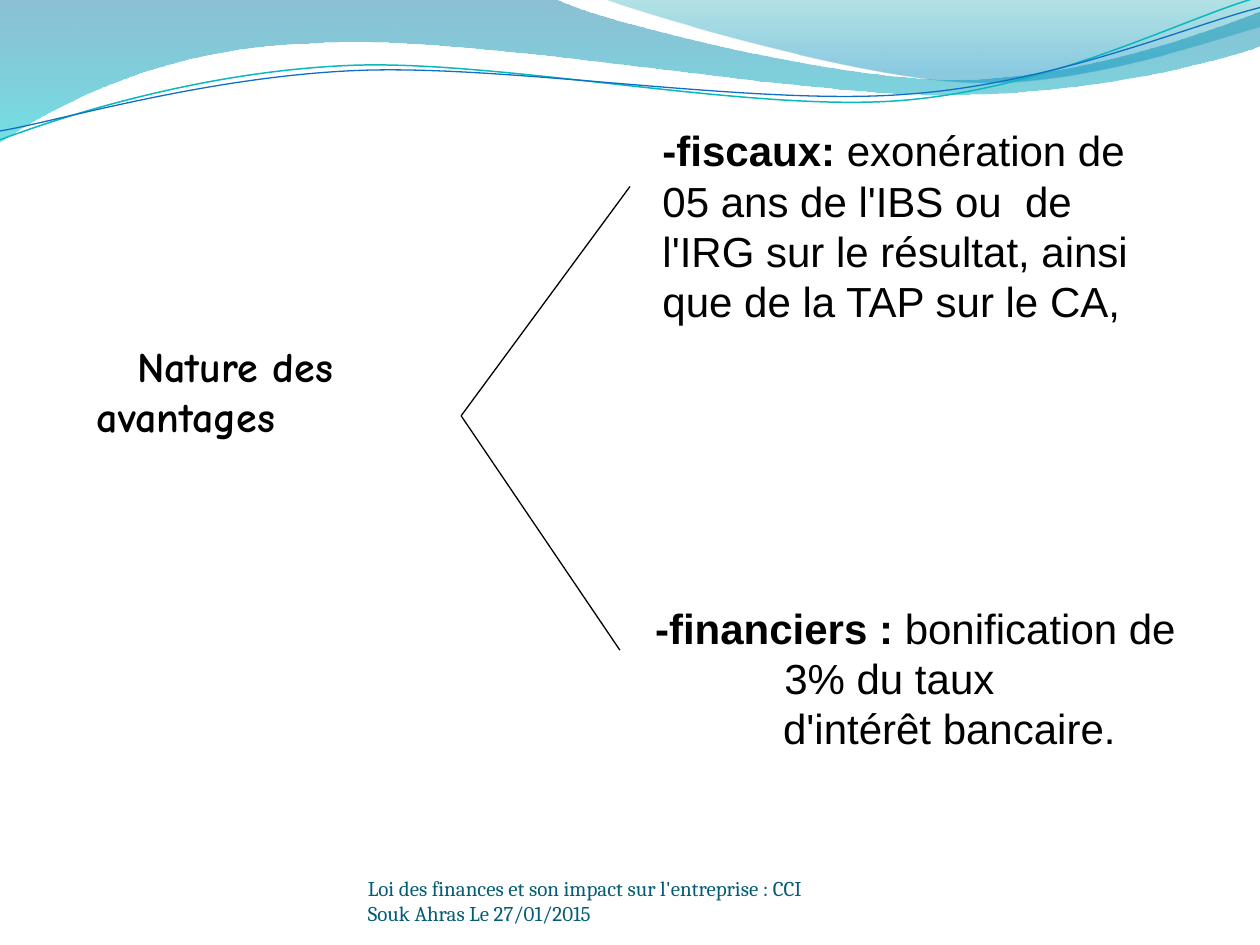
import dataclasses
from typing import Optional

import lxml.etree
import pptx
import pptx.dml.color
import pptx.enum.shapes
import pptx.enum.text
import pptx.oxml.ns
import pptx.util

RGBColor = pptx.dml.color.RGBColor
Anchor = pptx.enum.text.MSO_ANCHOR
Align = pptx.enum.text.PP_ALIGN
qn = pptx.oxml.ns.qn

BLACK = RGBColor(0x00, 0x00, 0x00)
FOOTER_TEAL = RGBColor(0x04, 0x5D, 0x75)
DEEP_BLUE = RGBColor(0x00, 0x74, 0xA1)
AQUA = RGBColor(0x00, 0xC6, 0xCF)
SEA_GREEN = RGBColor(0x00, 0xA1, 0xA9)
SKY_BLUE = RGBColor(0x00, 0x8B, 0xBF)
LINE_TEAL = RGBColor(0x0A, 0xB8, 0xBF)
LINE_BLUE = RGBColor(0x0F, 0x6F, 0xC6)

# The slide is a grid of 10 columns by 7.5 square rows
WIDTH = pptx.util.Inches(10)
HEIGHT = pptx.util.Inches(7.5)
COLUMNS, ROWS = 10, 7.5


def column(count: float) -> int:
    return round(WIDTH * count / COLUMNS)


def row(count: float) -> int:
    return round(HEIGHT * count / ROWS)


@dataclasses.dataclass
class Stop:
    position: float
    color: RGBColor
    opacity: int  # percent


@dataclasses.dataclass
class Wave:
    frame: tuple  # left, top, right, bottom
    start: tuple
    segments: list  # two numbers are a straight side, six a cubic curve
    stops: tuple = ()
    line: Optional[RGBColor] = None
    weight: float = 0


@dataclasses.dataclass
class Span:
    text: str
    bold: bool = False


@dataclasses.dataclass
class Para:
    spans: list
    align: Align = Align.LEFT
    margin: float = 0
    indent: float = 0


@dataclasses.dataclass
class TextBlock:
    place: tuple  # left, top, width, height
    paras: list
    font: str = "Arial"
    size: float = 24
    color: RGBColor = BLACK
    anchor: Anchor = Anchor.TOP
    inset: Optional[float] = None


WAVES = [
    Wave((-0.01, -0.01, 10.01, 1.13), (0, 0),
         [(4.4, -0.01),
          (4.76, 0.17, 6.64, 0.63, 7.58, 0.63),
          (8.53, 0.63, 9.58, 0.26, 10, 0.09),
          (10.01, 0.36),
          (9.83, 0.44, 8.7, 0.76, 7.46, 0.75),
          (6.22, 0.75, 3.82, 0.28, 2.57, 0.34),
          (1.29, 0.36, 0.46, 0.83, -0.01, 1.13),
          (0, 0)],
         stops=(Stop(0, DEEP_BLUE, 45), Stop(1, AQUA, 55))),
    Wave((4.79, -0.01, 10, 0.69), (4.79, -0.01),
         [(5.09, 0.11, 6.82, 0.62, 7.69, 0.65),
          (8.56, 0.69, 9.61, 0.32, 10, 0.21),
          (10, 0),
          (4.79, -0.01)],
         stops=(Stop(0, SEA_GREEN, 30), Stop(0.8, SKY_BLUE, 45))),
    Wave((0, -0.02, 9.98, 1.11), (0, 1.11),
         [(0.48, 0.93, 1.58, 0.57, 2.77, 0.52),
          (3.95, 0.47, 5.93, 0.89, 7.13, 0.8),
          (8.33, 0.71, 9.38, 0.15, 9.98, -0.02)],
         line=LINE_TEAL, weight=0.85),
    Wave((0, 0.06, 10, 1.04), (0, 1.04),
         [(0.47, 0.96, 1.64, 0.61, 2.83, 0.56),
          (4.03, 0.51, 5.97, 0.84, 7.17, 0.75),
          (8.36, 0.67, 9.41, 0.21, 10, 0.06)],
         line=LINE_BLUE, weight=0.75),
]

FISCAL = TextBlock((5.16, 0.94, 4.14, 1.72), [
    Para([Span("-fiscaux:", True),
          Span(" exonération de 05 ans de l'IBS ou  de l'IRG sur le résultat, "
               "ainsi que de la TAP sur le CA,")])])
FINANCIAL = TextBlock((4.76, 4.73, 4.69, 1.31), [
    Para([Span("-financiers :", True), Span(" bonification de 3% du taux ")],
         Align.CENTER, indent=0.32),
    Para([Span("d'intérêt bancaire.")], Align.CENTER, margin=0.86)])
NATURE = TextBlock((0.67, 2.65, 2.99, 1.3), [
    Para([Span("Nature des avantages", True)], indent=0.32)],
    font="Comic Neue")
FOOTER = TextBlock((2.92, 6.95, 3.67, 0.4), [
    Para([Span("Loi des finances et son impact sur l'entreprise : "
               "CCI Souk Ahras Le 27/01/2015")])],
    font="Cambria", size=12, color=FOOTER_TEAL, anchor=Anchor.BOTTOM, inset=0)

BRANCH_START = (3.66, 3.3)
BRANCH_ENDS = [(5, 1.48), (4.92, 5.16)]


def add_step(outline, kind: str, numbers: tuple, left: float, top: float) -> None:
    """Add one drawing step, with its points measured from the frame's corner."""
    step = lxml.etree.SubElement(outline, qn(kind))
    for x, y in zip(numbers[::2], numbers[1::2]):
        point = lxml.etree.SubElement(step, qn("a:pt"))
        point.set("x", str(column(x - left)))
        point.set("y", str(row(y - top)))


def draw_wave(page, wave: Wave) -> None:
    left, top, right, bottom = wave.frame
    builder = page.shapes.build_freeform(column(left), row(top))
    builder.add_line_segments([(column(right), row(bottom))], close=False)
    shape = builder.convert_to_shape()
    shape.shadow.inherit = False

    # Smooth outline inside the frame
    outline = next(shape.element.spPr.iter(qn("a:path")))
    for child in list(outline):
        outline.remove(child)
    add_step(outline, "a:moveTo", wave.start, left, top)
    for segment in wave.segments:
        kind = "a:lnTo" if len(segment) == 2 else "a:cubicBezTo"
        add_step(outline, kind, segment, left, top)

    if not wave.stops:
        shape.fill.background()
        shape.line.color.rgb = wave.line
        shape.line.width = pptx.util.Pt(wave.weight)
        return
    lxml.etree.SubElement(outline, qn("a:close"))
    shape.line.fill.background()
    shape.fill.gradient()
    shape.fill.gradient_angle = 270
    for target, stop in zip(shape.fill.gradient_stops, wave.stops):
        target.position = stop.position
        target.color.rgb = stop.color
    # Transparency of each gradient stop
    for color, stop in zip(shape.element.spPr.iter(qn("a:srgbClr")), wave.stops):
        alpha = lxml.etree.SubElement(color, qn("a:alpha"))
        alpha.set("val", str(stop.opacity * 1000))


def draw_text(page, block: TextBlock):
    left, top, width, height = block.place
    box = page.shapes.add_textbox(column(left), row(top), column(width), row(height))
    frame = box.text_frame
    frame.word_wrap = True
    frame.vertical_anchor = block.anchor
    if block.inset is not None:
        frame.margin_left = frame.margin_right = column(block.inset)
        frame.margin_top = frame.margin_bottom = row(block.inset)
    for index, para in enumerate(block.paras):
        paragraph = frame.add_paragraph() if index else frame.paragraphs[0]
        paragraph.alignment = para.align
        properties = paragraph._p.get_or_add_pPr()
        properties.set("marL", str(column(para.margin)))
        properties.set("indent", str(column(para.indent)))
        for span in para.spans:
            run = paragraph.add_run()
            run.text = span.text
            run.font.name = block.font
            run.font.size = pptx.util.Pt(block.size)
            run.font.bold = span.bold
            run.font.color.rgb = block.color
    return box


def draw_branch(page, label, end: tuple) -> None:
    branch = page.shapes.add_connector(
        pptx.enum.shapes.MSO_CONNECTOR.STRAIGHT,
        column(BRANCH_START[0]), row(BRANCH_START[1]), column(end[0]), row(end[1]))
    branch.begin_connect(label, 3)
    branch.line.color.rgb = BLACK
    branch.line.width = pptx.util.Pt(0.75)
    lxml.etree.SubElement(branch.element.spPr, qn("a:effectLst"))


def main() -> None:
    deck = pptx.Presentation()
    deck.slide_width, deck.slide_height = WIDTH, HEIGHT
    page = deck.slides.add_slide(deck.slide_layouts[6])

    # Wavy header
    for wave in WAVES:
        draw_wave(page, wave)

    # The two kinds of advantages and their common label
    draw_text(page, FISCAL)
    draw_text(page, FINANCIAL)
    label = draw_text(page, NATURE)
    for end in BRANCH_ENDS:
        draw_branch(page, label, end)

    draw_text(page, FOOTER)
    deck.save("out.pptx")


if __name__ == "__main__":
    main()
